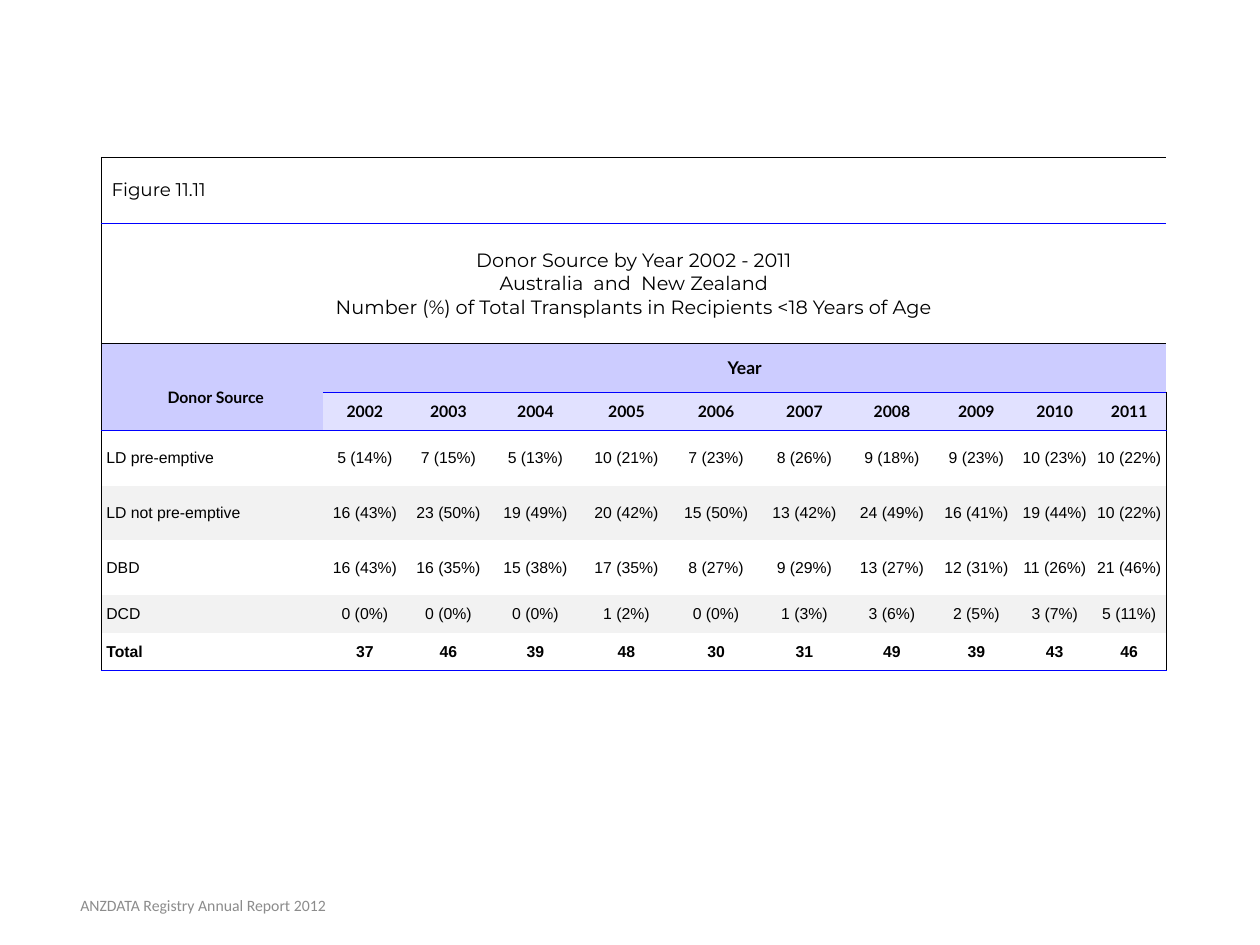
from lxml import etree
from pptx import Presentation
from pptx.dml.color import RGBColor
from pptx.enum import text
from pptx.oxml import ns
from pptx.util import Pt

BLACK = RGBColor(0x00, 0x00, 0x00)
BLUE = RGBColor(0x00, 0x00, 0xFF)
GREY = RGBColor(0x8C, 0x8C, 0x8C)
HEADER = RGBColor(0xCC, 0xCC, 0xFF)
YEAR_BAND = RGBColor(0xE1, 0xE1, 0xFF)
STRIPE = RGBColor(0xF2, 0xF2, 0xF2)

PLAIN_TABLE_STYLE = "{2D5ABB26-0587-4C30-8999-92F81FD0307C}"
COLUMN_WIDTHS = [126.5, 48, 47.5, 52, 52, 50.5, 50.5, 49.5, 47, 42.6, 42.6]
ROW_HEIGHTS = [37.7, 68.8, 27.8, 21.8, 31.6, 31.2, 31.2, 21.6, 21.6]
LAST_COLUMN = len(COLUMN_WIDTHS) - 1
LAST_ROW = len(ROW_HEIGHTS) - 1

# Font name, size and bold for each row of the table
ROW_FONTS = [
    ("Montserrat", 10.5, False),
    ("Montserrat", 11, False),
    ("Lato", 10, True),
    ("Lato", 9, True),
    *[("Arial", 9, False)] * 4,
    ("Arial", 9, True),
]
ROW_FILLS = {2: HEADER, 3: YEAR_BAND, 5: STRIPE, 7: STRIPE}

# Horizontal rules, counted from the top edge: colour and width
RULES = {
    0: (BLACK, 0.75),
    1: (BLUE, 1),
    2: (BLACK, 0.75),
    3: (BLUE, 1),
    4: (BLUE, 1),
    9: (BLUE, 0.75),
}

TITLE = (
    "Donor Source by Year 2002 - 2011\n"
    "Australia  and  New Zealand\v"
    "Number (%) of Total Transplants in Recipients <18 Years of Age"
)
ROWS = [
    ["Figure 11.11"],
    [TITLE],
    ["Donor Source", "Year"],
    ["", *map(str, range(2002, 2012))],
    ["LD pre-emptive", "5 (14%)", "7 (15%)", "5 (13%)", "10 (21%)", "7 (23%)",
     "8 (26%)", "9 (18%)", "9 (23%)", "10 (23%)", "10 (22%)"],
    ["LD not pre-emptive", "16 (43%)", "23 (50%)", "19 (49%)", "20 (42%)", "15 (50%)",
     "13 (42%)", "24 (49%)", "16 (41%)", "19 (44%)", "10 (22%)"],
    ["DBD", "16 (43%)", "16 (35%)", "15 (38%)", "17 (35%)", "8 (27%)",
     "9 (29%)", "13 (27%)", "12 (31%)", "11 (26%)", "21 (46%)"],
    ["DCD", "0 (0%)", "0 (0%)", "0 (0%)", "1 (2%)", "0 (0%)",
     "1 (3%)", "3 (6%)", "2 (5%)", "3 (7%)", "5 (11%)"],
    ["Total", "37", "46", "39", "48", "30", "31", "49", "39", "43", "46"],
]


def style_paragraph(para, name, size, bold, color, align):
    para.alignment = align
    para.font.name = name
    para.font.size = Pt(size)
    para.font.bold = bold
    para.font.color.rgb = color


def add_borders(cell, row, column):
    """Draw the outer frame and the horizontal rules that touch this cell."""
    frame = (BLACK, 0.75)
    beside_rule = column == 0  # the first header cell spans the rule under "Year"
    edges = {
        "a:lnL": frame if column == 0 else None,
        "a:lnR": frame if column == LAST_COLUMN else None,
        "a:lnT": None if beside_rule and row == 3 else RULES.get(row),
        "a:lnB": None if beside_rule and row == 2 else RULES.get(row + 1),
    }
    properties = cell._tc.get_or_add_tcPr()
    for tag, edge in edges.items():
        line = etree.SubElement(properties, ns.qn(tag))
        if edge is None:
            line.set("w", "0")
            etree.SubElement(line, ns.qn("a:noFill"))
            continue
        color, width = edge
        line.set("w", str(int(Pt(width))))
        fill = etree.SubElement(line, ns.qn("a:solidFill"))
        etree.SubElement(fill, ns.qn("a:srgbClr")).set("val", str(color))


def format_cell(cell, row, column):
    add_borders(cell, row, column)
    color = HEADER if row == 3 and column == 0 else ROW_FILLS.get(row)
    if color is None:
        cell.fill.background()
    else:
        cell.fill.solid()
        cell.fill.fore_color.rgb = color
    cell.vertical_anchor = text.MSO_ANCHOR.MIDDLE
    inset = Pt(5.76 if row == 0 else 2.8)
    cell.margin_left = cell.margin_right = inset
    cell.margin_top = cell.margin_bottom = inset
    left_aligned = column == 0 and row not in (1, 2)
    align = text.PP_ALIGN.LEFT if left_aligned else text.PP_ALIGN.CENTER
    name, size, bold = ROW_FONTS[row]
    if row == 2 and column == 0:
        size = 9
        cell.vertical_anchor = text.MSO_ANCHOR.BOTTOM
        cell.margin_bottom = Pt(13.7)
        cell.margin_left = Pt(6.8)
    for para in cell.text_frame.paragraphs:
        style_paragraph(para, name, size, bold, BLACK, align)


def add_donor_table(page, left, top):
    table = page.shapes.add_table(
        len(ROW_HEIGHTS), len(COLUMN_WIDTHS), Pt(left), Pt(top),
        Pt(sum(COLUMN_WIDTHS)), Pt(sum(ROW_HEIGHTS)),
    ).table
    table.first_row = table.horz_banding = False
    table._tbl.tblPr.find(ns.qn("a:tableStyleId")).text = PLAIN_TABLE_STYLE
    for column, width in zip(table.columns, COLUMN_WIDTHS):
        column.width = Pt(width)
    for row, height in zip(table.rows, ROW_HEIGHTS):
        row.height = Pt(height)
    for row, words in enumerate(ROWS):
        for column, word in enumerate(words):
            table.cell(row, column).text = word
        for column in range(LAST_COLUMN + 1):
            format_cell(table.cell(row, column), row, column)
    for row in (0, 1):
        table.cell(row, 0).merge(table.cell(row, LAST_COLUMN))
    table.cell(2, 0).merge(table.cell(3, 0))
    table.cell(2, 1).merge(table.cell(2, LAST_COLUMN))


def add_footer(page, left, top, width, height):
    box = page.shapes.add_textbox(Pt(left), Pt(top), Pt(width), Pt(height))
    frame = box.text_frame
    frame.word_wrap = True
    frame.vertical_anchor = text.MSO_ANCHOR.MIDDLE
    frame.text = "ANZDATA Registry Annual Report 2012"
    style_paragraph(frame.paragraphs[0], "Calibri", 9, False, GREY, text.PP_ALIGN.CENTER)


def main():
    deck = Presentation()
    deck.slide_width, deck.slide_height = Pt(720), Pt(540)
    page = deck.slides.add_slide(deck.slide_layouts[6])
    add_donor_table(page, 58, 90)
    add_footer(page, 2, 502.5, 228, 29)
    deck.save("out.pptx")


if __name__ == "__main__":
    main()
